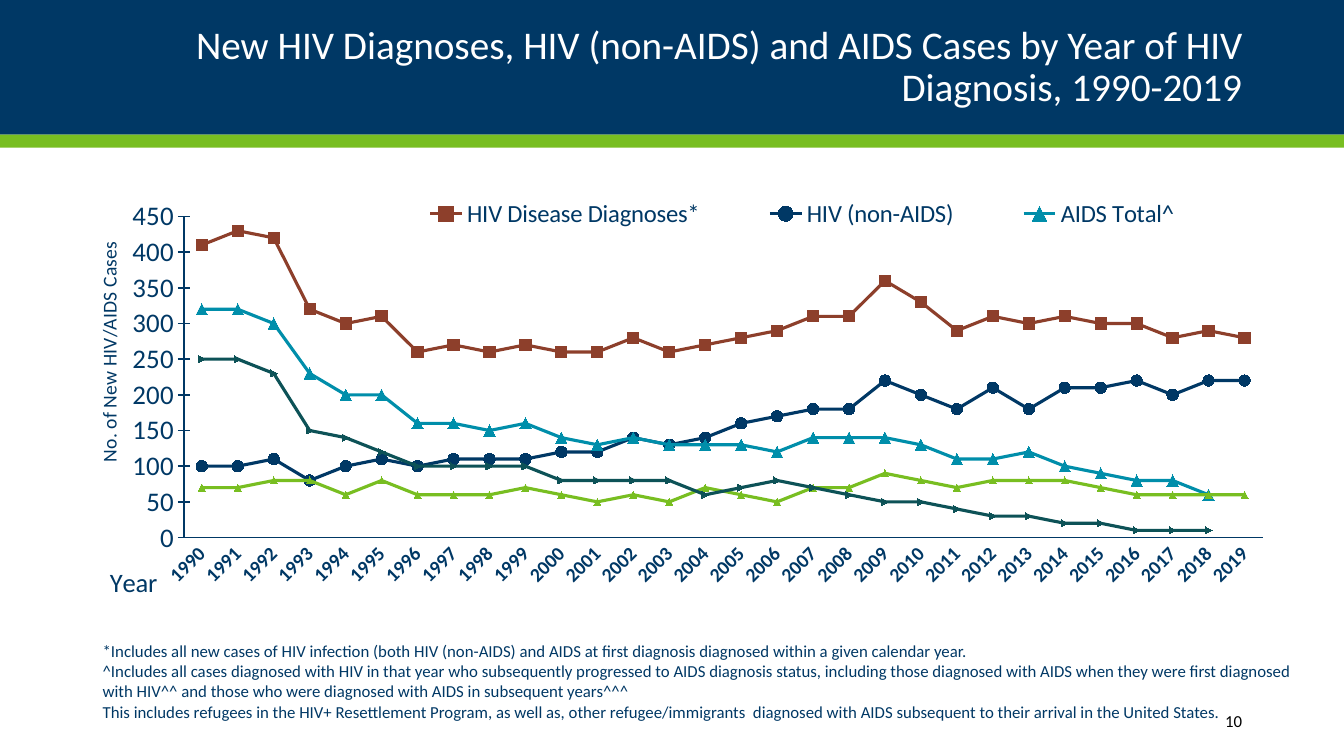
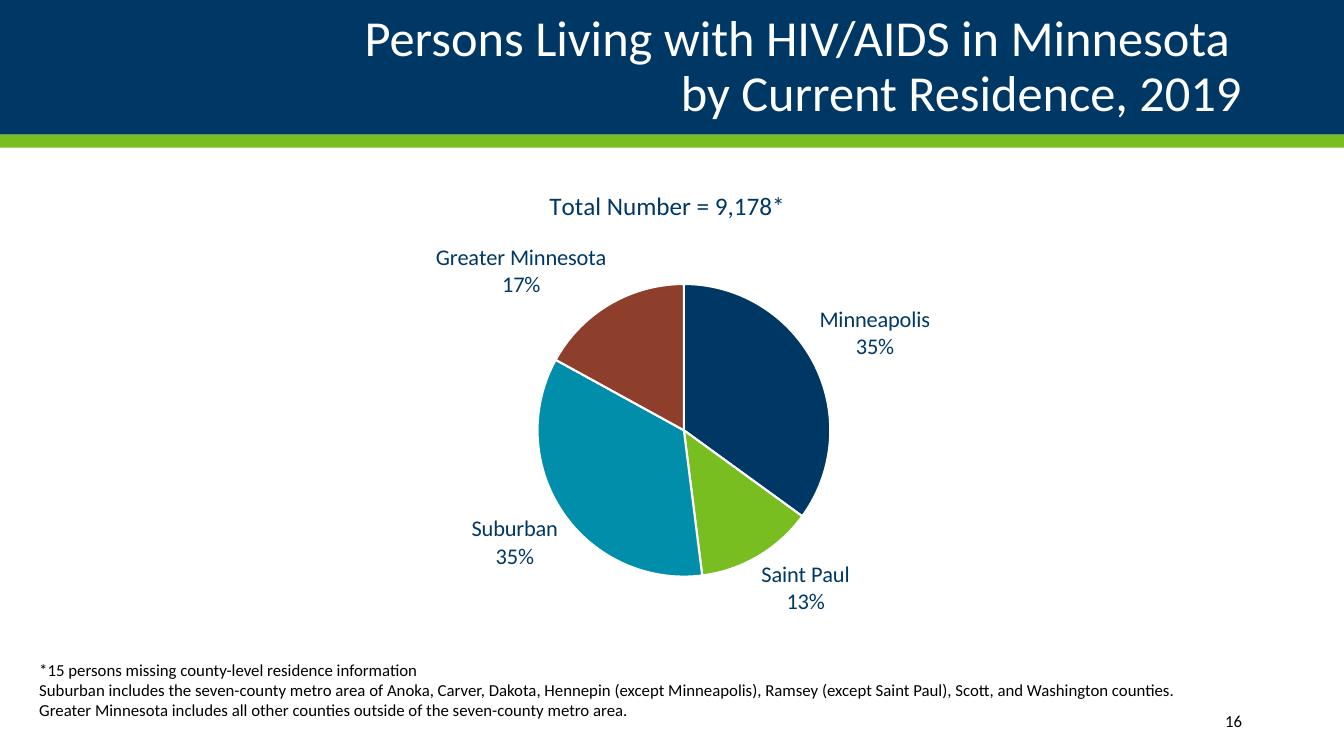
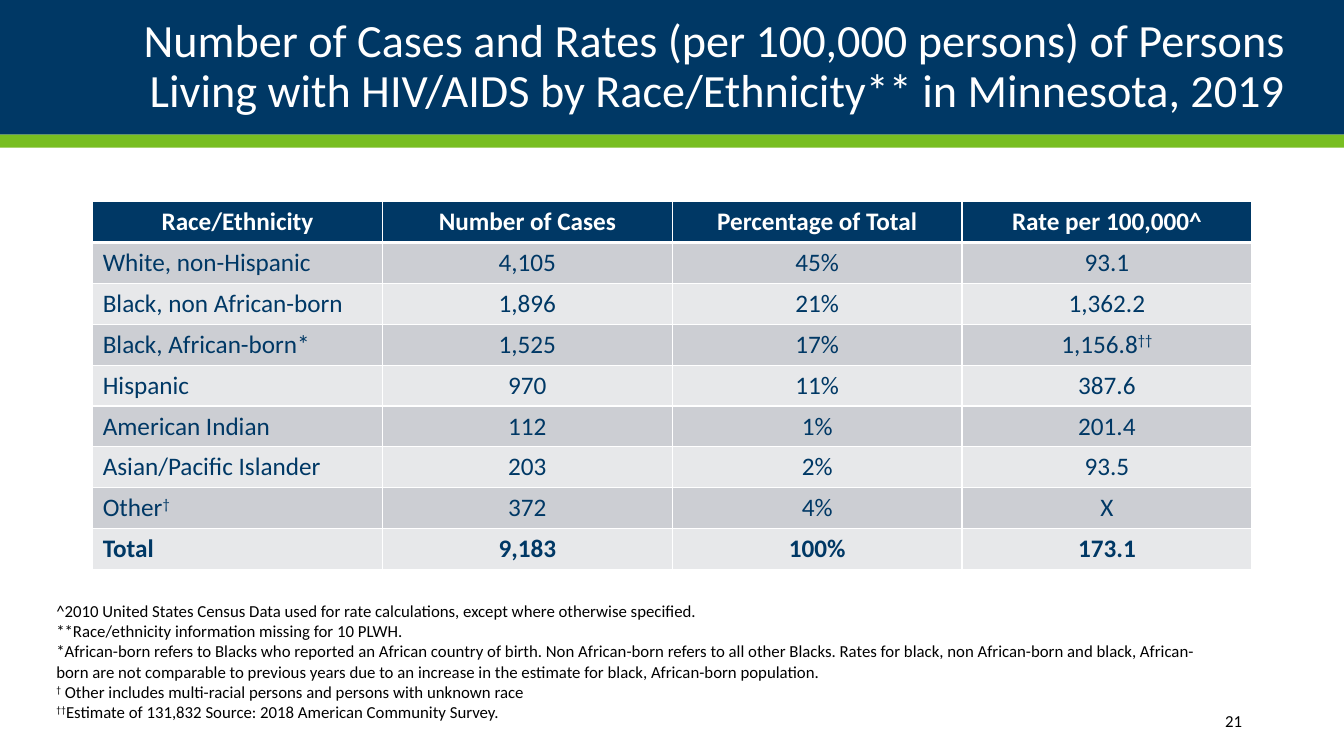
from dataclasses import dataclass
from itertools import groupby

from pptx import Presentation
from pptx.chart.chart import Chart
from pptx.chart.data import CategoryChartData
from pptx.dml.color import RGBColor
from pptx.enum.chart import (XL_CHART_TYPE, XL_LABEL_POSITION, XL_LEGEND_POSITION,
                             XL_MARKER_STYLE, XL_TICK_MARK)
from pptx.enum.shapes import MSO_SHAPE
from pptx.enum.text import MSO_ANCHOR, PP_ALIGN
from pptx.oxml import parse_xml
from pptx.oxml.ns import nsdecls
from pptx.slide import Slide
from pptx.table import _Cell as Cell
from pptx.text.text import Font, TextFrame
from pptx.util import Emu, Inches, Pt

RECTANGLE = MSO_SHAPE.RECTANGLE
MIDDLE = MSO_ANCHOR.MIDDLE
LEFT, CENTER, RIGHT = PP_ALIGN.LEFT, PP_ALIGN.CENTER, PP_ALIGN.RIGHT
LINE_CHART, PIE_CHART = XL_CHART_TYPE.LINE_MARKERS, XL_CHART_TYPE.PIE
SQUARE, CIRCLE = XL_MARKER_STYLE.SQUARE, XL_MARKER_STYLE.CIRCLE
TRIANGLE, AUTOMATIC = XL_MARKER_STYLE.TRIANGLE, XL_MARKER_STYLE.AUTOMATIC
NO_TICK, CROSS_TICK = XL_TICK_MARK.NONE, XL_TICK_MARK.CROSS

NAVY = RGBColor(0x00, 0x38, 0x65)
GREEN = RGBColor(0x78, 0xBE, 0x21)
TEAL = RGBColor(0x00, 0x8E, 0xAA)
RUST = RGBColor(0x8D, 0x3F, 0x2B)
DARK_TEAL = RGBColor(0x0D, 0x52, 0x57)
WHITE = RGBColor(0xFF, 0xFF, 0xFF)
BLACK = RGBColor(0x00, 0x00, 0x00)
ROW_GREYS = (RGBColor(0xCC, 0xCE, 0xD3), RGBColor(0xE7, 0xE8, 0xEA))

FONT = "Calibri"
WIDTH, HEIGHT = Inches(13.33), Inches(7.5)
SUPERSCRIPT_SIGN = "†"


@dataclass(frozen=True)
class Box:
    """A rectangle in percent of the slide's width and height."""
    left: float
    top: float
    width: float
    height: float

    def lengths(self) -> tuple[Emu, Emu, Emu, Emu]:
        return (Emu(int(WIDTH * self.left / 100)), Emu(int(HEIGHT * self.top / 100)),
                Emu(int(WIDTH * self.width / 100)), Emu(int(HEIGHT * self.height / 100)))


@dataclass(frozen=True)
class TextStyle:
    size: float
    color: RGBColor
    bold: bool = False
    align: PP_ALIGN = LEFT
    spacing: float = 1.0


@dataclass(frozen=True)
class Trend:
    name: str
    color: RGBColor
    marker: XL_MARKER_STYLE
    marker_size: int
    values: tuple[int | None, ...]


@dataclass(frozen=True)
class Region:
    name: str
    color: RGBColor
    percent: int


NAVY_BAND = Box(0, 0, 100, 17.8)
GREEN_BAND = Box(0, 17.8, 100, 1.73)
TITLE_BOX = Box(6.9, 2.27, 86.25, 13.33)
WIDE_TITLE_BOX = Box(3.45, 2.27, 92.93, 13.33)
NUMBER_BOX = Box(81.15, 92.67, 12, 5.33)

TRENDS = (
    Trend("HIV Disease Diagnoses*", RUST, SQUARE, 8,
          (410, 430, 420, 320, 300, 310, 260, 270, 260, 270, 260, 260, 280, 260, 270,
           280, 290, 310, 310, 360, 330, 290, 310, 300, 310, 300, 300, 280, 290, 280)),
    Trend("HIV (non-AIDS)", NAVY, CIRCLE, 8,
          (100, 100, 110, 80, 100, 110, 100, 110, 110, 110, 120, 120, 140, 130, 140,
           160, 170, 180, 180, 220, 200, 180, 210, 180, 210, 210, 220, 200, 220, 220)),
    Trend("AIDS Total^", TEAL, TRIANGLE, 8,
          (320, 320, 300, 230, 200, 200, 160, 160, 150, 160, 140, 130, 140, 130, 130,
           130, 120, 140, 140, 140, 130, 110, 110, 120, 100, 90, 80, 80, 60, None)),
    Trend("AIDS at first diagnosis^^", GREEN, AUTOMATIC, 5,
          (70, 70, 80, 80, 60, 80, 60, 60, 60, 70, 60, 50, 60, 50, 70,
           60, 50, 70, 70, 90, 80, 70, 80, 80, 80, 70, 60, 60, 60, 60)),
    Trend("AIDS (progressed)^^^", DARK_TEAL, AUTOMATIC, 5,
          (250, 250, 230, 150, 140, 120, 100, 100, 100, 100, 80, 80, 80, 80, 60,
           70, 80, 70, 60, 50, 50, 40, 30, 30, 20, 20, 10, 10, 10, None)),
)
LEGEND_COUNT = 3

REGIONS = (
    Region("Minneapolis", NAVY, 35),
    Region("Saint Paul", GREEN, 13),
    Region("Suburban", TEAL, 35),
    Region("Greater Minnesota", RUST, 17),
)

CASE_ROWS = (
    ("Race/Ethnicity", "Number of Cases", "Percentage of Total", "Rate per 100,000^"),
    ("White, non-Hispanic", "4,105", "45%", "93.1"),
    ("Black, non African-born", "1,896", "21%", "1,362.2"),
    ("Black, African-born*", "1,525", "17%", "1,156.8††"),
    ("Hispanic", "970", "11%", "387.6"),
    ("American Indian", "112", "1%", "201.4"),
    ("Asian/Pacific Islander", "203", "2%", "93.5"),
    ("Other†", "372", "4%", "X"),
    ("Total", "9,183", "100%", "173.1"),
)

DIAGNOSIS_NOTES = (
    "*Includes all new cases of HIV infection (both HIV (non-AIDS) and AIDS at first "
    "diagnosis diagnosed within a given calendar year.",
    "^Includes all cases diagnosed with HIV in that year who subsequently progressed to "
    "AIDS diagnosis status, including those diagnosed with AIDS when they were first "
    "diagnosed with HIV^^ and those who were diagnosed with AIDS in subsequent years^^^",
    "This includes refugees in the HIV+ Resettlement Program, as well as, other "
    "refugee/immigrants  diagnosed with AIDS subsequent to their arrival in the "
    "United States.",
)
RESIDENCE_NOTES = (
    "*15 persons missing county-level residence information",
    "Suburban includes the seven-county metro area of Anoka, Carver, Dakota, Hennepin "
    "(except Minneapolis), Ramsey (except Saint Paul), Scott, and Washington counties. "
    "Greater Minnesota includes all other counties outside of the seven-county metro area.",
)
RACE_NOTES = (
    "^2010 United States Census Data used for rate calculations, except where otherwise "
    "specified.",
    "**Race/ethnicity information missing for 10 PLWH.",
    "*African-born refers to Blacks who reported an African country of birth. Non "
    "African-born refers to all other Blacks. Rates for black, non African-born and black, "
    "African-born are not comparable to previous years due to an increase in the estimate "
    "for black, African-born population.",
    "† Other includes multi-racial persons and persons with unknown race",
    "††Estimate of 131,832 Source: 2018 American Community Survey.",
)


def style_font(font: Font, size: float, color: RGBColor, bold: bool = False) -> None:
    font.name, font.size, font.bold = FONT, Pt(size), bold
    font.color.rgb = color


def write_text(frame: TextFrame, lines: tuple[str, ...], style: TextStyle) -> None:
    """Write one paragraph per line, with daggers raised."""
    for index, line in enumerate(lines):
        paragraph = frame.add_paragraph() if index else frame.paragraphs[0]
        paragraph.alignment, paragraph.line_spacing = style.align, style.spacing
        for raised, letters in groupby(line, key=lambda sign: sign == SUPERSCRIPT_SIGN):
            for part_index, part in enumerate("".join(letters).split("\v")):
                if part_index:
                    paragraph.add_line_break()
                run = paragraph.add_run()
                run.text = part
                style_font(run.font, style.size, style.color, style.bold)
                if raised:
                    run._r.get_or_add_rPr().set("baseline", "30000")


def add_text(slide: Slide, box: Box, lines: tuple[str, ...], style: TextStyle) -> None:
    frame = slide.shapes.add_textbox(*box.lengths()).text_frame
    frame.word_wrap = True
    frame.vertical_anchor = MIDDLE
    write_text(frame, lines, style)


def add_band(slide: Slide, box: Box, color: RGBColor) -> None:
    band = slide.shapes.add_shape(RECTANGLE, *box.lengths())
    band.shadow.inherit = False
    band.fill.solid()
    band.fill.fore_color.rgb = color
    band.line.fill.background()


def add_slide(presentation: Presentation, title: str, size: float, number: int,
              title_box: Box = TITLE_BOX) -> Slide:
    """Add a slide with the shared bands, title and slide number."""
    slide = presentation.slides.add_slide(presentation.slide_layouts[6])
    add_band(slide, NAVY_BAND, NAVY)
    add_band(slide, GREEN_BAND, GREEN)
    add_text(slide, title_box, (title,), TextStyle(size, WHITE, align=RIGHT, spacing=0.9))
    add_text(slide, NUMBER_BOX, (str(number),), TextStyle(12, BLACK, align=RIGHT))
    return slide


def place_part(chart: Chart, query: str, left: float, top: float,
               size: tuple[float, float] | None = None) -> None:
    """Fix a chart part at shares of the chart's width and height."""
    part = chart.element.xpath(query)[0]
    for layout in part.xpath("c:layout"):
        part.remove(layout)
    target = '<c:layoutTarget val="inner"/>' if query.endswith("plotArea") else ""
    entries = [("x", left), ("y", top)]
    if size:
        entries += [("w", size[0]), ("h", size[1])]
    modes = '<c:xMode val="edge"/><c:yMode val="edge"/>'
    values = "".join(f'<c:{name} val="{value}"/>' for name, value in entries)
    leading = len(part.xpath("c:tx | c:legendPos | c:legendEntry"))
    part.insert(leading, parse_xml(
        f'<c:layout {nsdecls("c")}><c:manualLayout>{target}{modes}{values}'
        '</c:manualLayout></c:layout>'))


def add_chart(slide: Slide, kind: XL_CHART_TYPE, box: Box, data: CategoryChartData) -> Chart:
    """Add a chart with a clear background."""
    chart = slide.shapes.add_chart(kind, *box.lengths(), data).chart
    style_font(chart.font, 16, NAVY)
    chart.element.xpath("c:chart")[0].addnext(parse_xml(
        f'<c:spPr {nsdecls("c", "a")}><a:noFill/><a:ln><a:noFill/></a:ln></c:spPr>'))
    return chart


def style_axis(axis, title: str, title_size: float, label_size: float, bold: bool,
               line_width: float, tick: XL_TICK_MARK) -> None:
    axis.has_major_gridlines = False
    axis.major_tick_mark, axis.minor_tick_mark = tick, NO_TICK
    axis.format.line.color.rgb = NAVY
    axis.format.line.width = Pt(line_width)
    style_font(axis.tick_labels.font, label_size, NAVY, bold)
    write_text(axis.axis_title.text_frame, (title,), TextStyle(title_size, NAVY))


def rotate_text(chart: Chart, query: str, degrees: int) -> None:
    body = chart.element.xpath(query)[0]
    body.set("rot", str(degrees * 60000))
    body.set("vert", "horz")


def add_trend_chart(slide: Slide) -> None:
    data = CategoryChartData()
    data.categories = [str(year) for year in range(1990, 2020)]
    for trend in TRENDS:
        data.add_series(trend.name, trend.values)
    chart = add_chart(slide, LINE_CHART, Box(5.85, 9.2, 97.88, 72), data)
    chart.has_title = False
    for series, trend in zip(chart.plots[0].series, TRENDS):
        series.smooth = False
        series.format.line.color.rgb = trend.color
        series.format.line.width = Pt(2.25)
        marker = series.marker
        marker.style, marker.size = trend.marker, trend.marker_size
        marker.format.fill.solid()
        marker.format.fill.fore_color.rgb = trend.color
        marker.format.line.color.rgb = trend.color

    style_axis(chart.category_axis, "Year", 19, 14, True, 0.27, NO_TICK)
    style_axis(chart.value_axis, "No. of New HIV/AIDS Cases", 14, 19.2, False, 1.07, CROSS_TICK)
    chart.value_axis.minimum_scale, chart.value_axis.maximum_scale = 0, 450
    chart.value_axis.major_unit = 50
    rotate_text(chart, ".//c:catAx/c:txPr/a:bodyPr", -45)
    rotate_text(chart, ".//c:valAx/c:title//a:bodyPr", -90)

    chart.has_legend = True
    chart.legend.position = XL_LEGEND_POSITION.TOP
    chart.legend.include_in_layout = False
    style_font(chart.legend.font, 17.6, NAVY)
    legend_position = chart.element.xpath(".//c:legendPos")[0]
    for index in reversed(range(LEGEND_COUNT, len(TRENDS))):
        legend_position.addnext(parse_xml(
            f'<c:legendEntry {nsdecls("c")}><c:idx val="{index}"/>'
            '<c:delete val="1"/></c:legendEntry>'))

    place_part(chart, ".//c:plotArea", 0.08, 0.27, (0.82, 0.59))
    place_part(chart, ".//c:legend", 0.22, 0.23, (0.66, 0.07))
    place_part(chart, ".//c:catAx/c:title", 0.02, 0.9)
    place_part(chart, ".//c:valAx/c:title", 0.01, 0.31)


def add_residence_chart(slide: Slide) -> None:
    data = CategoryChartData()
    data.categories = [region.name for region in REGIONS]
    data.add_series("Series 1", [region.percent for region in REGIONS])
    chart = add_chart(slide, PIE_CHART, Box(6.9, 21.07, 86.25, 63.47), data)
    chart.has_legend = False
    chart.has_title = True
    write_text(chart.chart_title.text_frame, ("Total Number = 9,178*",), TextStyle(18, NAVY))

    plot = chart.plots[0]
    plot.vary_by_categories = True
    for index, region in enumerate(REGIONS):
        point_format = plot.series[0].points[index].format
        point_format.fill.solid()
        point_format.fill.fore_color.rgb = region.color
        point_format.line.color.rgb = WHITE
        point_format.line.width = Pt(1.5)

    plot.has_data_labels = True
    labels = plot.data_labels
    labels.show_value = False
    labels.show_category_name = labels.show_percentage = True
    labels.number_format, labels.number_format_is_linked = "0%", False
    labels.position = XL_LABEL_POSITION.OUTSIDE_END
    style_font(labels.font, 16, NAVY)
    chart.element.xpath(".//c:dLbls/c:showBubbleSize")[0].addnext(
        parse_xml(f'<c:separator {nsdecls("c")}>\n</c:separator>'))

    place_part(chart, ".//c:plotArea", 0.38, 0.26, (0.26, 0.61))
    place_part(chart, "c:chart/c:title", 0.39, 0.05)


def set_borders(cell: Cell, top: int, bottom: int) -> None:
    properties = cell._tc.get_or_add_tcPr()
    for index, (side, points) in enumerate((("L", 1), ("R", 1), ("T", top), ("B", bottom))):
        properties.insert(index, parse_xml(
            f'<a:ln{side} {nsdecls("a")} w="{Pt(points)}"><a:solidFill>'
            f'<a:srgbClr val="{WHITE}"/></a:solidFill></a:ln{side}>'))


def add_case_table(slide: Slide) -> None:
    table = slide.shapes.add_table(len(CASE_ROWS), len(CASE_ROWS[0]),
                                   *Box(6.9, 26.67, 86.25, 48.67).lengths()).table
    for row, texts in enumerate(CASE_ROWS):
        is_header = row == 0
        is_total = row == len(CASE_ROWS) - 1
        for column, text in enumerate(texts):
            cell = table.cell(row, column)
            cell.vertical_anchor = MIDDLE
            cell.fill.solid()
            cell.fill.fore_color.rgb = NAVY if is_header else ROW_GREYS[(row - 1) % 2]
            set_borders(cell, top=3 if row == 1 else 1, bottom=3 if is_header else 1)
            write_text(cell.text_frame, (text,), TextStyle(
                18, WHITE if is_header else NAVY, is_header or is_total,
                CENTER if is_header or column else LEFT))


def main() -> None:
    presentation = Presentation()
    presentation.slide_width, presentation.slide_height = WIDTH, HEIGHT

    slide = add_slide(presentation, "New HIV Diagnoses, HIV (non-AIDS) and AIDS Cases by "
                      "Year of HIV Diagnosis, 1990-2019", 28, 10)
    add_trend_chart(slide)
    add_text(slide, Box(6.9, 83.9, 91.58, 12.4), DIAGNOSIS_NOTES, TextStyle(12, NAVY))

    slide = add_slide(presentation, "Persons Living with HIV/AIDS in Minnesota \v"
                      "by Current Residence, 2019", 36, 16)
    add_residence_chart(slide)
    add_text(slide, Box(2.18, 84.53, 86.25, 13.47), RESIDENCE_NOTES, TextStyle(12, BLACK))

    slide = add_slide(presentation, "Number of Cases and Rates (per 100,000 persons) of "
                      "Persons Living with HIV/AIDS by Race/Ethnicity** in Minnesota, 2019",
                      33, 21, WIDE_TITLE_BOX)
    add_case_table(slide)
    add_text(slide, Box(3.45, 78.8, 86.25, 17.33), RACE_NOTES, TextStyle(12, BLACK))

    presentation.save("out.pptx")


if __name__ == "__main__":
    main()
